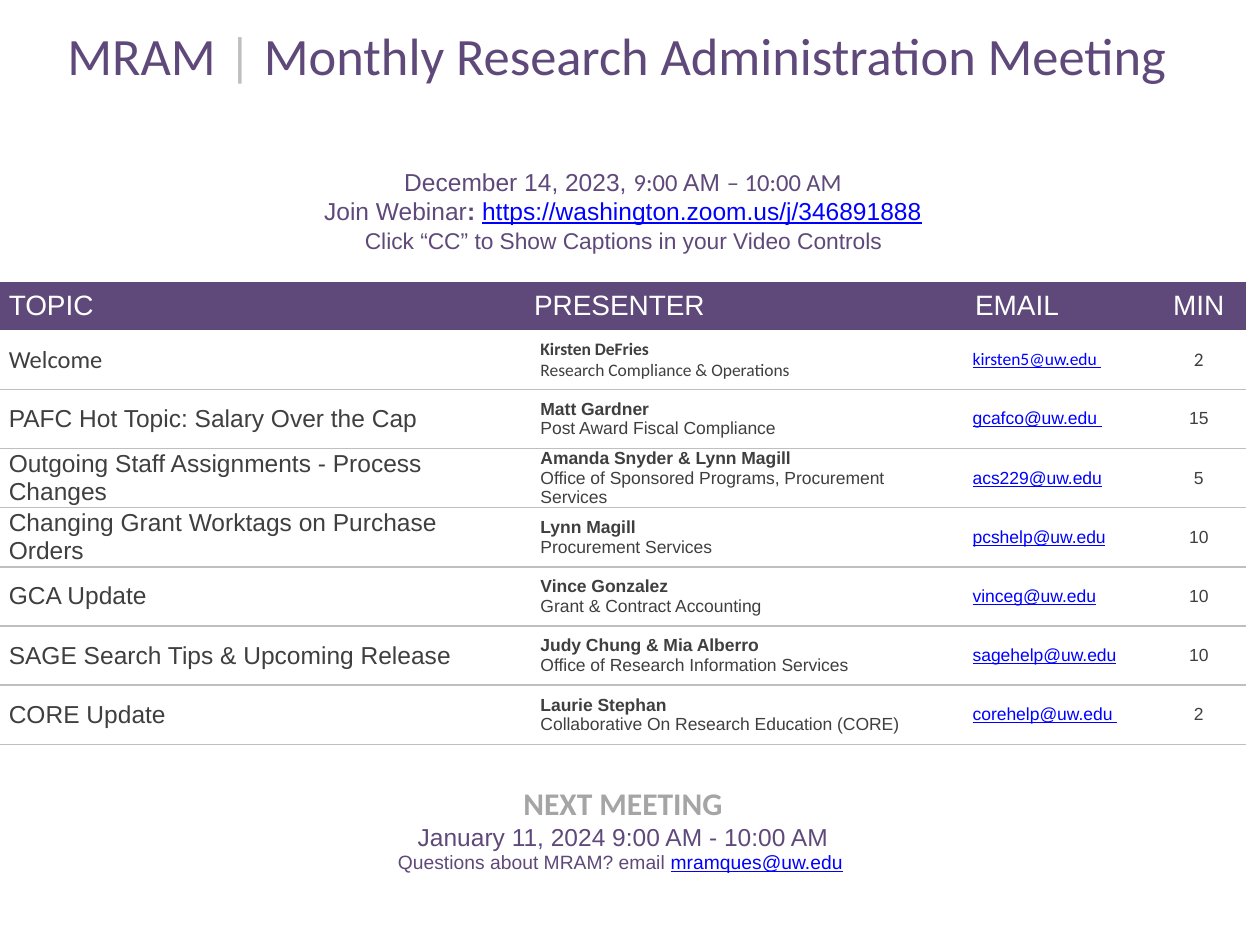
from pptx import Presentation
from pptx.dml.color import RGBColor
from pptx.enum.text import MSO_ANCHOR, PP_ALIGN
from pptx.oxml import parse_xml
from pptx.oxml.ns import nsdecls, qn
from pptx.util import Inches, Pt

MIDDLE, BOTTOM = MSO_ANCHOR.MIDDLE, MSO_ANCHOR.BOTTOM
LEFT, CENTER = PP_ALIGN.LEFT, PP_ALIGN.CENTER
PURPLE, WHITE, GREY, DARK, BLUE = "5F497A", "FFFFFF", "BFBFBF", "3F3F3F", "0000FF"
NO_STYLE = "{2D5ABB26-0587-4C30-8999-92F81FD0307C}"


def color(value):
    return RGBColor.from_string(value)


def fill_cell(cell, paragraphs, align=LEFT, margins=(0.07, 0.07, 0), anchor=MIDDLE, fill=WHITE):
    cell.fill.solid()
    cell.fill.fore_color.rgb = color(fill)
    cell.vertical_anchor = anchor
    left, right, bottom = margins
    cell.margin_left, cell.margin_right = Inches(left), Inches(right)
    cell.margin_top, cell.margin_bottom = Inches(0), Inches(bottom)
    frame = cell.text_frame
    for index, runs in enumerate(paragraphs):
        para = frame.add_paragraph() if index else frame.paragraphs[0]
        para.alignment = align
        for text, font, size, ink, bold in runs:
            span = para.add_run()
            span.text = text
            span.font.name = font
            span.font.size = Pt(size)
            span.font.bold = bold
            span.font.underline = ink == BLUE
            span.font.color.rgb = color(ink)


deck = Presentation()
deck.slide_width, deck.slide_height = Inches(10), Inches(7.5)
page = deck.slides.add_slide(deck.slide_layouts[6])

agenda = [
    ("Welcome", "Kirsten DeFries", "Research Compliance & Operations", "kirsten5@uw.edu ", "2"),
    ("PAFC Hot Topic: Salary Over the Cap", "Matt Gardner", "Post Award Fiscal Compliance",
     "gcafco@uw.edu ", "15"),
    ("Outgoing Staff Assignments - Process Changes", "Amanda Snyder & Lynn Magill",
     "Office of Sponsored Programs, Procurement Services", "acs229@uw.edu", "5"),
    ("Changing Grant Worktags on Purchase Orders", "Lynn Magill", "Procurement Services",
     "pcshelp@uw.edu", "10"),
    ("GCA Update", "Vince Gonzalez", "Grant & Contract Accounting", "vinceg@uw.edu", "10"),
    ("SAGE Search Tips & Upcoming Release", "Judy Chung & Mia Alberro",
     "Office of Research Information Services", "sagehelp@uw.edu", "10"),
    ("CORE Update", "Laurie Stephan", "Collaborative On Research Education (CORE)",
     "corehelp@uw.edu ", "2"),
]
widths = [4.17, 3.43, 1.54, 0.75]
heights = [0.71, 1.53, 0.38] + [0.47] * len(agenda) + [1.57]

table = page.shapes.add_table(len(heights), len(widths), Inches(0), Inches(0),
                              Inches(sum(widths)), Inches(sum(heights))).table
table.first_row = table.horz_banding = False
next(table._tbl.iter(qn("a:tableStyleId"))).text = NO_STYLE
for column, width in zip(table.columns, widths):
    column.width = Inches(width)
for row, height in zip(table.rows, heights):
    row.height = Inches(height)
last = len(heights) - 1
for index in (0, 1, last):
    table.cell(index, 0).merge(table.cell(index, 3))

fill_cell(table.cell(0, 0), [[
    ("MRAM ", "Calibri", 30, PURPLE, False),
    ("|", "Calibri", 30, GREY, False),
    (" Monthly Research Administration Meeting ", "Calibri", 30, PURPLE, False),
]], CENTER, anchor=BOTTOM)

details = table.cell(1, 0)
fill_cell(details, [
    [("December 14, 2023, ", "Arial", 14, PURPLE, False),
     ("9:00 ", "Calibri", 14, PURPLE, False),
     ("AM ", "Arial", 14, PURPLE, False),
     ("– 10:00 AM", "Calibri", 14, PURPLE, False)],
    [("Join Webinar", "Arial", 14, PURPLE, False),
     (": ", "Arial", 14, PURPLE, True),
     ("https://washington.zoom.us/j/346891888", "Arial", 14, BLUE, False)],
    [("Click “CC” to Show Captions in your Video Controls", "Arial", 13, PURPLE, False)],
], CENTER, (0.07, 0.07, 0.22), BOTTOM)
details.text_frame.paragraphs[2].line_spacing = 1.15

headings = [("TOPIC", LEFT, 0.07), ("PRESENTER", LEFT, 0.07), ("EMAIL", LEFT, 0.14), ("MIN", CENTER, 0.07)]
for index, (heading, align, left) in enumerate(headings):
    fill_cell(table.cell(2, index), [[(heading, "Arial", 16, WHITE, False)]],
              align, (left, 0.07, 0), fill=PURPLE)

for index, (topic, presenter, office, email, minutes) in enumerate(agenda):
    font, minute_size = ("Arial", 10) if index else ("Calibri", 11)
    cells = table.rows[index + 3].cells
    fill_cell(cells[0], [[(topic, font, 14, DARK, False)]])
    fill_cell(cells[1], [[(presenter, font, 10, DARK, True)], [(office, font, 10, DARK, False)]],
              margins=(0.12, 0.12, 0))
    fill_cell(cells[2], [[(email, font, 10, BLUE, False)]], margins=(0.12, 0.12, 0))
    fill_cell(cells[3], [[(minutes, font, minute_size, DARK, False)]], CENTER)
    for cell in cells:
        cell._tc.get_or_add_tcPr().insert(0, parse_xml(
            f'<a:lnB {nsdecls("a")} w="{Pt(1)}"><a:solidFill><a:srgbClr val="{GREY}"/>'
            '</a:solidFill></a:lnB>'))

fill_cell(table.cell(last, 0), [
    [("NEXT MEETING", "Calibri", 18, "A5A5A5", True)],
    [("January 11, 2024 9:00 AM - 10:00 AM", "Arial", 14, PURPLE, False)],
    [("Questions about MRAM? email ", "Arial", 11, PURPLE, False),
     ("mramques@uw.edu", "Arial", 11, BLUE, False),
     (" ", "Arial", 11, PURPLE, False)],
], CENTER, (0.07, 0.07, 0.22))

deck.save("out.pptx")
